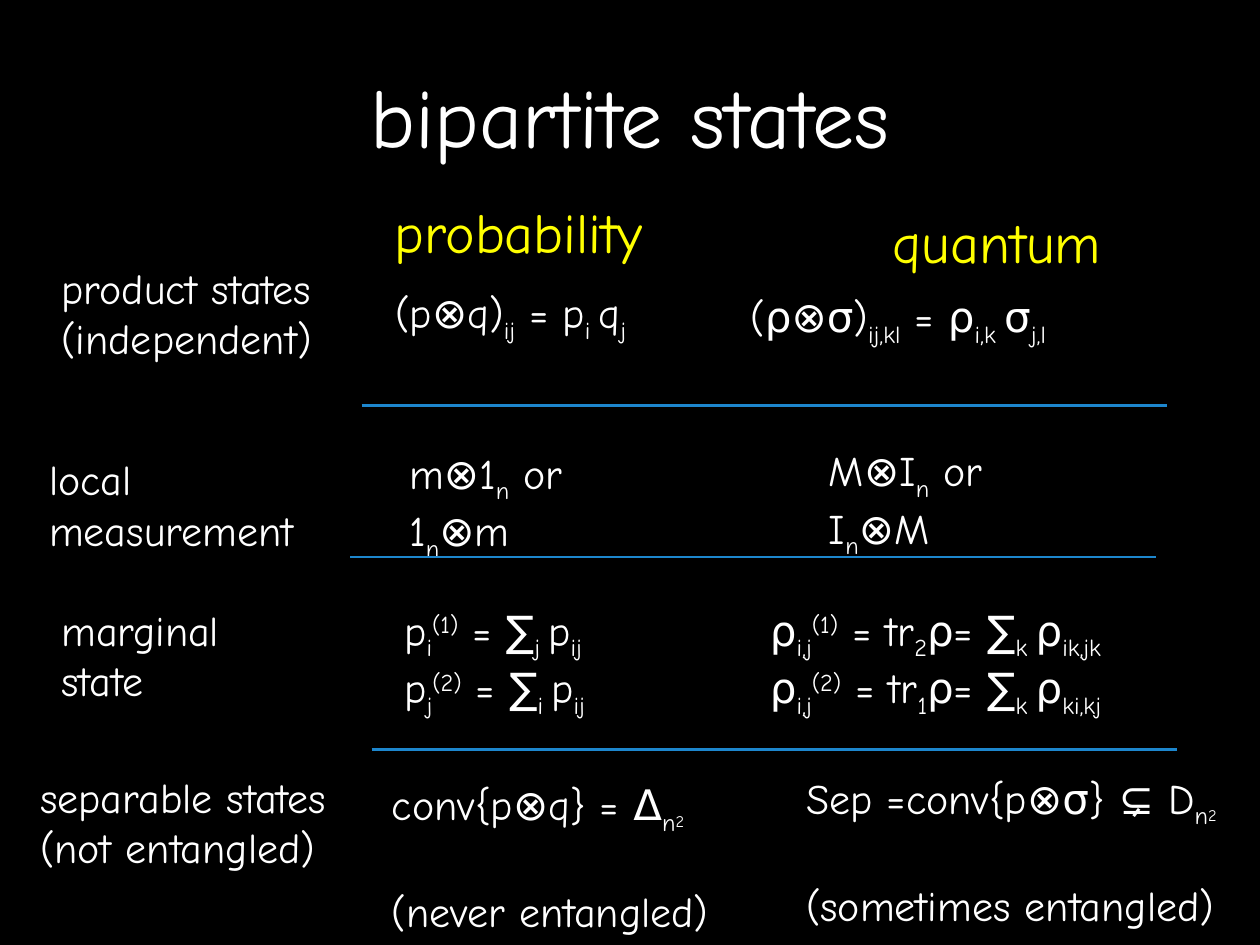
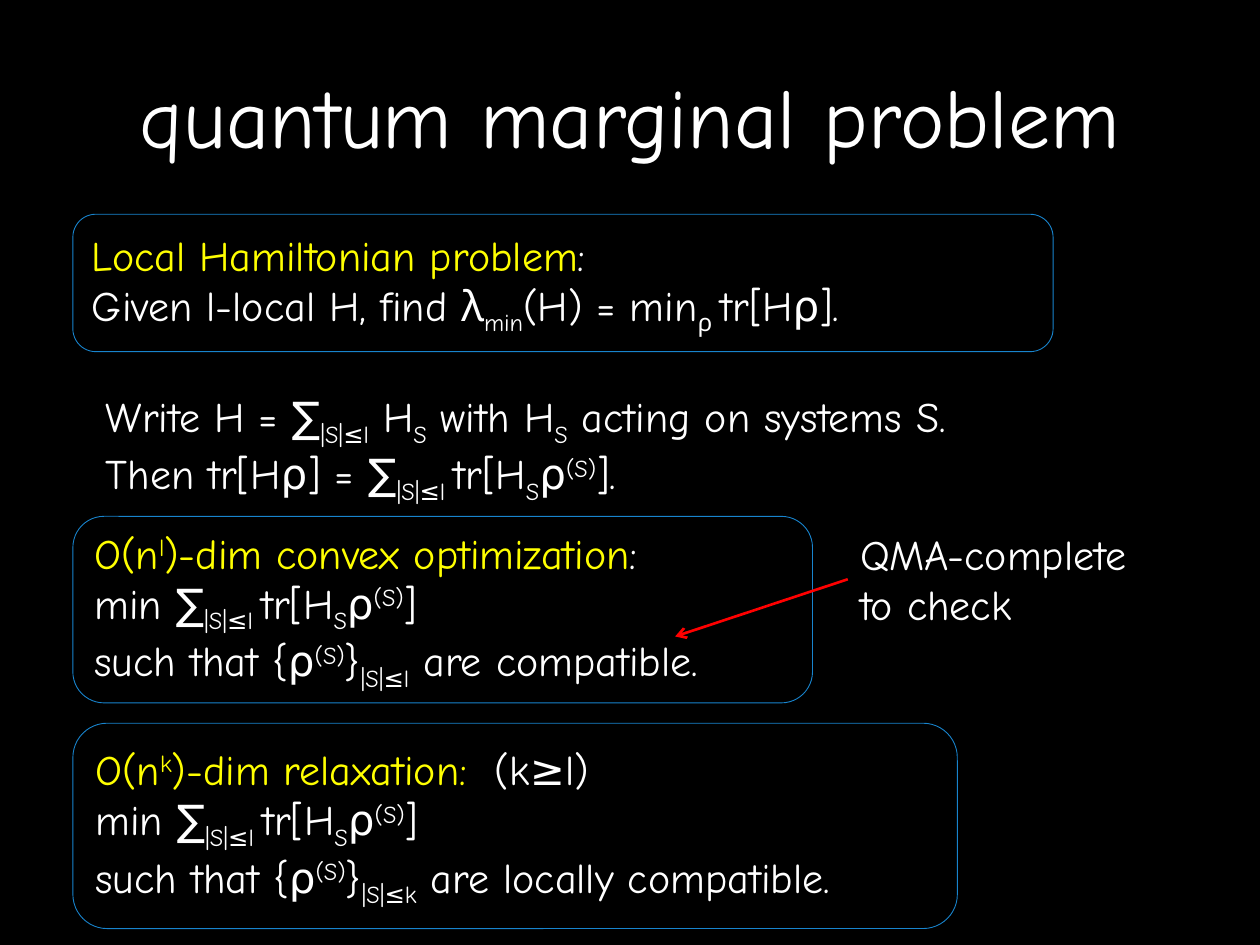
from dataclasses import dataclass

from lxml.etree import SubElement
from pptx import Presentation
from pptx.dml.color import RGBColor
from pptx.enum.shapes import MSO_CONNECTOR as Connector, MSO_SHAPE as Shape
from pptx.enum.text import MSO_ANCHOR as Anchor, PP_ALIGN as Align
from pptx.oxml.ns import qn
from pptx.util import Cm, Pt


@dataclass(frozen=True)
class Theme:
    font: str = "Comic Neue"
    background: str = "000000"
    text: str = "FFFFFF"
    accent: str = "FFFF00"
    divider: str = "1D86CD"
    border: str = "1884CD"
    arrow: str = "FF0000"
    title_size: int = 48
    heading_size: int = 32
    body_size: int = 24
    exponent_size: int = 16


MARKS = "_^#~*"
SUBSCRIPT, SUPERSCRIPT, EXPONENT, NORMAL, ACCENT = MARKS
BASELINES = {SUBSCRIPT: "-25000", SUPERSCRIPT: "30000", EXPONENT: "-25000"}

STATE_ROWS = [
    ((0.99, 5.16, 6.0, ["product states", "(independent)"]),
     (7.72, 5.66, 5.56, ["(p⊗q)_ij~ = p_i ~q_j"]),
     (14.88, 5.74, 8.31, ["(ρ⊗σ)_ij,kl~ = ρ_i,k ~σ_j,l"])),
    ((0.74, 9.02, 5.61, ["local", "measurement"]),
     (8.0, 8.89, 5.31, ["m⊗1_n~ or 1_n~⊗m"]),
     (16.46, 8.84, 5.59, ["M⊗I_n~ or I_n~⊗M"])),
    ((0.99, 12.06, 3.78, ["marginal", "state"]),
     (7.9, 12.06, 4.7, ["p_i^(1)~ = ∑_j ~p_ij", "p_j^(2)~ = ∑_i ~p_ij"]),
     (15.27, 12.06, 9.42, ["ρ_i,j^(1)~ = tr_2~ρ= ∑_k ~ρ_ik,jk",
                           "ρ_i,j^(2)~ = tr_1~ρ= ∑_k ~ρ_ki,kj"])),
]
SEPARABLE_LABEL = (0.56, 15.42, 6.73, ["separable states", "(not entangled)"])
SEPARABLE_SETS = [
    (7.65, 15.57, 7.14, ["conv{p⊗q} = Δ_n#2", "(never entangled)"]),
    (16.0, 15.44, 8.99, ["Sep =conv{p⊗σ} ⊊ D_n#2", "(sometimes entangled)"]),
]
DIVIDERS = [(7.29, 8.18), (7.06, 11.23), (7.49, 15.11)]
DIVIDER_WIDTH = 16.24

LOCAL_ENERGY = "∑_|S|≤l ~tr[H_S~ρ^(S)~]"
PANEL_LEFT = 1.47
PANELS = [
    (4.32, 19.76, 2.77, ["*Local Hamiltonian problem*:",
                         "Given l-local H, find λ_min~(H) = min_ρ ~tr[Hρ]."]),
    (10.41, 14.91, 3.76, ["*O(n^l~)-dim convex optimization*:",
                          "min " + LOCAL_ENERGY,
                          "such that {ρ^(S)~}_|S|≤l~ are compatible."]),
    (14.58, 17.83, 4.14, ["*O(n^k~)-dim relaxation:  *(k≥l)",
                          "min " + LOCAL_ENERGY,
                          "such that {ρ^(S)~}_|S|≤k~ are locally compatible."]),
]


class Deck:
    def __init__(self, theme):
        self.theme = theme
        self.presentation = Presentation()
        self.presentation.slide_width = Cm(25.4)
        self.presentation.slide_height = Cm(19.05)
        self.slide = None

    def add_slide(self, title):
        layout = self.presentation.slide_layouts[6]
        self.slide = self.presentation.slides.add_slide(layout)
        fill = self.slide.background.fill
        fill.solid()
        fill.fore_color.rgb = RGBColor.from_string(self.theme.background)
        shape = self.slide.shapes.add_textbox(Cm(1.9), Cm(0.33), Cm(21.6), Cm(3.96))
        self.set_lines(shape, [title], self.theme.title_size)
        shape.text_frame.vertical_anchor = Anchor.MIDDLE
        shape.text_frame.paragraphs[0].alignment = Align.CENTER

    def add_run(self, paragraph, text, size, mode, color):
        if not text:
            return
        run = paragraph.add_run()
        run.text = text
        run.font.name = self.theme.font
        run.font.size = Pt(self.theme.exponent_size if mode == EXPONENT else size)
        run.font.color.rgb = RGBColor.from_string(color)
        if mode in BASELINES:
            run._r.get_or_add_rPr().set("baseline", BASELINES[mode])

    def set_lines(self, shape, lines, size, color=None, gap=0):
        plain = color or self.theme.text
        frame = shape.text_frame
        frame.word_wrap = True
        for index, line in enumerate(lines):
            paragraph = frame.add_paragraph() if index else frame.paragraphs[0]
            paragraph.alignment = Align.LEFT
            if index and gap:
                paragraph.space_before = Pt(gap)
            text, mode, current = "", NORMAL, plain
            for character in line:
                if character not in MARKS:
                    text += character
                    continue
                self.add_run(paragraph, text, size, mode, current)
                text = ""
                if character == ACCENT:
                    current = self.theme.accent if current == plain else plain
                else:
                    mode = character
            self.add_run(paragraph, text, size, mode, current)

    def add_text(self, left, top, width, lines, size=None, color=None, gap=0):
        size = size or self.theme.body_size
        line_count = len(lines) + (1 if gap else 0)
        height = line_count * size * 0.043 + 0.25
        shape = self.slide.shapes.add_textbox(Cm(left), Cm(top), Cm(width), Cm(height))
        self.set_lines(shape, lines, size, color, gap)
        return shape

    def add_heading(self, left, top, width, text):
        self.add_text(left, top, width, [text], self.theme.heading_size, self.theme.accent)

    def add_panel(self, left, top, width, height, lines):
        shape = self.slide.shapes.add_shape(
            Shape.ROUNDED_RECTANGLE, Cm(left), Cm(top), Cm(width), Cm(height))
        shape.shadow.inherit = False
        shape.fill.background()
        shape.line.color.rgb = RGBColor.from_string(self.theme.border)
        shape.line.width = Pt(0.5)
        shape.text_frame.vertical_anchor = Anchor.MIDDLE
        self.set_lines(shape, lines, self.theme.body_size)

    def add_line(self, start, end, color):
        connector = self.slide.shapes.add_connector(
            Connector.STRAIGHT, *(Cm(value) for value in (*start, *end)))
        connector.line.color.rgb = RGBColor.from_string(color)
        connector.line.width = Pt(1.5)
        SubElement(connector._element.spPr, qn("a:effectLst"))
        return connector

    def add_arrow(self, source, start, end):
        connector = self.add_line(start, end, self.theme.arrow)
        connector.begin_connect(source, 1)
        SubElement(connector.line._get_or_add_ln(), qn("a:tailEnd"), type="arrow")


def build_bipartite_states(deck):
    deck.add_slide("bipartite states")
    deck.add_heading(7.7, 3.86, 5.89, "probability")
    deck.add_heading(17.75, 4.06, 4.85, "quantum")
    for row in STATE_ROWS:
        for cell in row:
            deck.add_text(*cell)
    for left, top in DIVIDERS:
        deck.add_line((left, top), (left + DIVIDER_WIDTH, top), deck.theme.divider)
    deck.add_text(*SEPARABLE_LABEL)
    for cell in SEPARABLE_SETS:
        deck.add_text(*cell, gap=28.5)


def build_marginal_problem(deck):
    deck.add_slide("quantum marginal problem")
    for panel in PANELS:
        deck.add_panel(PANEL_LEFT, *panel)
    deck.add_text(1.88, 7.75, 18.87, [
        "Write H = ∑_|S|≤l~ H_S~ with H_S~ acting on systems S.",
        "Then tr[Hρ] = " + LOCAL_ENERGY + ".",
    ])
    complexity = deck.add_text(17.09, 10.52, 6.22, ["QMA-complete", "to check"])
    deck.add_arrow(complexity, (17.09, 11.68), (13.61, 12.83))


def main():
    deck = Deck(Theme())
    build_bipartite_states(deck)
    build_marginal_problem(deck)
    deck.presentation.save("out.pptx")


if __name__ == "__main__":
    main()
